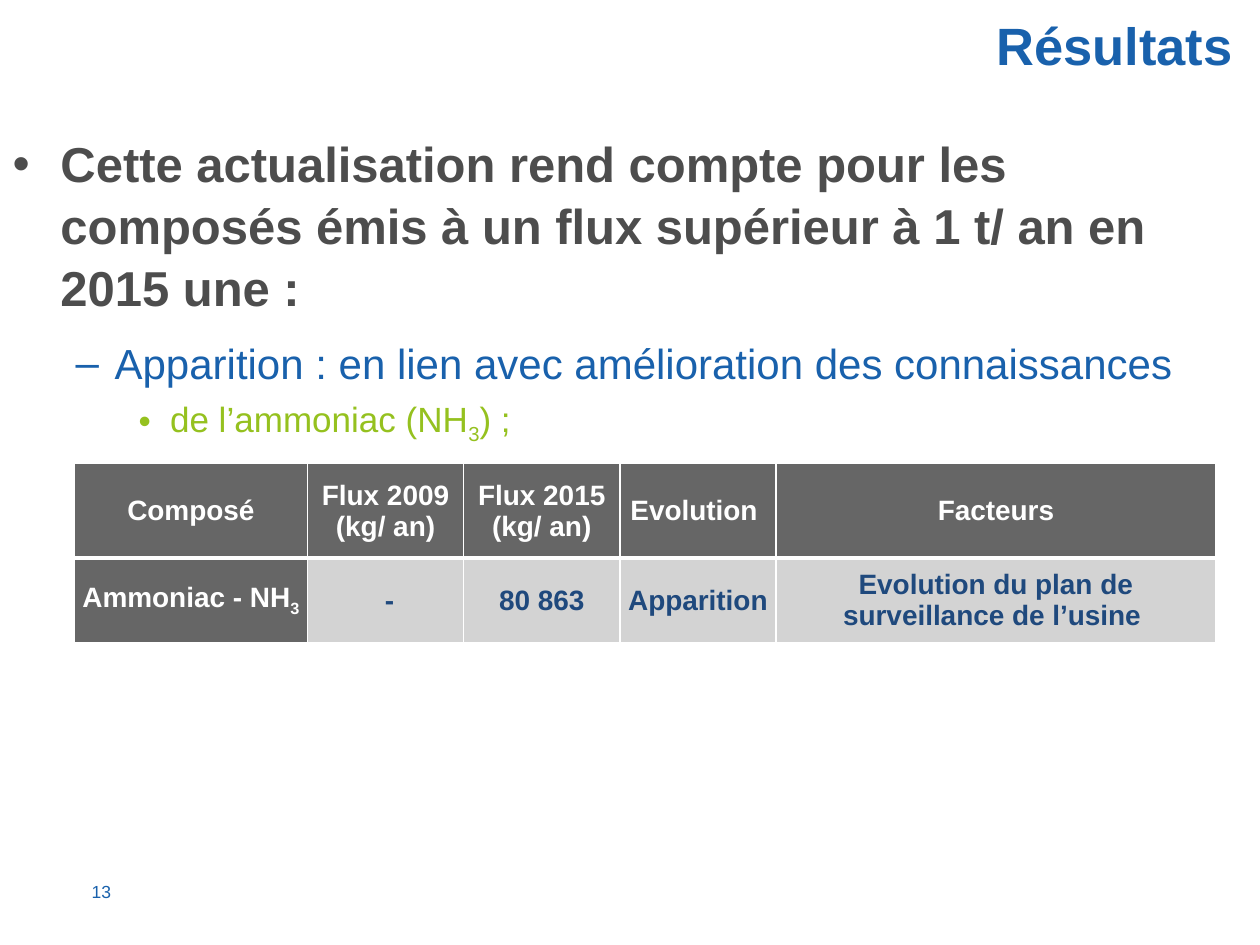
from lxml import etree
from pptx import Presentation
from pptx.dml.color import RGBColor
from pptx.enum.text import MSO_ANCHOR, MSO_AUTO_SIZE, PP_ALIGN
from pptx.oxml.ns import qn
from pptx.util import Inches, Pt

BLUE = RGBColor(0x19, 0x61, 0xAC)
GREEN = RGBColor(0x95, 0xC1, 0x1F)
DARK = RGBColor(0x4D, 0x4D, 0x4D)
GRAY = RGBColor(0x66, 0x66, 0x66)
LIGHT = RGBColor(0xD3, 0xD3, 0xD3)
NAVY = RGBColor(0x1F, 0x49, 0x7D)
WHITE = RGBColor(0xFF, 0xFF, 0xFF)
TOP, MIDDLE = MSO_ANCHOR.TOP, MSO_ANCHOR.MIDDLE
CENTER, LEFT, RIGHT = PP_ALIGN.CENTER, PP_ALIGN.LEFT, PP_ALIGN.RIGHT
FIXED = MSO_AUTO_SIZE.NONE

# Text between underscores is set as subscript.
TITLE = "Résultats "
NUMBER = "13"
POINTS = [
    ("Cette actualisation rend compte pour les composés émis à un flux "
     "supérieur à 1 t/ an en 2015 une :",
     {"size": Pt(28), "bold": True}, DARK, 0.38, 0.38),
    ("Apparition : en lien avec amélioration des connaissances",
     {"size": Pt(24), "bold": False}, BLUE, 0.81, 0.31),
    ("de l’ammoniac (NH_3_) ;",
     {"size": Pt(20), "bold": False}, GREEN, 1.25, 0.25),
]
ROWS = [
    ["Composé", "Flux 2009 (kg/ an)", "Flux 2015 (kg/ an)", "Evolution ",
     "Facteurs"],
    ["Ammoniac - NH_3_", " -", "80 863", "Apparition",
     "Evolution du plan de surveillance de l’usine "],
]
WIDTHS = [1.85, 1.24, 1.24, 1.24, 3.49]
HEIGHTS = [0.75, 0.67]


def write(par, text, form, color, align):
    par.alignment = align
    for i, part in enumerate(text.split("_")):
        if not part:
            continue
        run = par.add_run()
        run.text = part
        for name, value in {"name": "Arial", **form}.items():
            setattr(run.font, name, value)
        run.font.color.rgb = color
        if i % 2:
            run._r.get_or_add_rPr().set("baseline", "-25000")


def place(shape, left, top, width, height, anchor):
    shape.left, shape.top = Inches(left), Inches(top)
    shape.width, shape.height = Inches(width), Inches(height)
    frame = shape.text_frame
    frame.word_wrap = True
    frame.auto_size = FIXED
    frame.vertical_anchor = anchor
    return frame


def border(cell, sides):
    props = cell._tc.get_or_add_tcPr()
    for side, width in sides.items():
        line = etree.SubElement(props, qn("a:ln" + side), w=str(Pt(width)))
        fill = etree.SubElement(line, qn("a:solidFill"))
        etree.SubElement(fill, qn("a:srgbClr"), val=str(WHITE))


def add_table(slide):
    frame = slide.shapes.add_table(
        len(ROWS), len(WIDTHS), Inches(0.59), Inches(3.68),
        Inches(sum(WIDTHS)), Inches(sum(HEIGHTS)))
    table = frame.table
    for col, width in zip(table.columns, WIDTHS):
        col.width = Inches(width)
    for row, height in zip(table.rows, HEIGHTS):
        row.height = Inches(height)
    layout = {"margin_left": Inches(0.05), "margin_right": Inches(0.05),
              "margin_top": 0, "margin_bottom": 0, "vertical_anchor": MIDDLE}
    for r, texts in enumerate(ROWS):
        for c, text in enumerate(texts):
            cell = table.cell(r, c)
            head = r == 0 or c == 0
            for name, value in layout.items():
                setattr(cell, name, value)
            border(cell, {"L": 1, "R": 1, "T": 3 if r else 1,
                          "B": 1 if r else 3})
            cell.fill.solid()
            cell.fill.fore_color.rgb = GRAY if head else LIGHT
            write(cell.text_frame.paragraphs[0], text,
                  {"size": Pt(16), "bold": True},
                  WHITE if head else NAVY, CENTER)


def main():
    deck = Presentation()
    deck.slide_width, deck.slide_height = Inches(10), Inches(7.5)
    slide = deck.slides.add_slide(deck.slide_layouts[1])

    title = place(slide.shapes.title, 2.29, 0.05, 7.71, 0.86, TOP)
    write(title.paragraphs[0], TITLE, {"size": Pt(30), "bold": True},
          BLUE, RIGHT)

    body = place(slide.placeholders[1], 0, 0.99, 10, 6.13, TOP)
    for level, (text, form, color, left, hang) in enumerate(POINTS):
        par = body.add_paragraph() if level else body.paragraphs[0]
        par.level = level
        par.line_spacing = 1.05
        if level == 0:
            par.space_before, par.space_after = Pt(0), Pt(6)
        props = par._p.get_or_add_pPr()
        props.set("marL", str(Inches(left)))
        props.set("indent", str(-Inches(hang)))
        write(par, text, form, color, LEFT)

    add_table(slide)

    box = slide.shapes.add_textbox(0, 0, 0, 0)
    number = place(box, 0.51, 6.94, 0.47, 0.27, MIDDLE)
    write(number.paragraphs[0], NUMBER, {"size": Pt(10)}, BLUE, RIGHT)

    deck.save("out.pptx")


if __name__ == "__main__":
    main()
